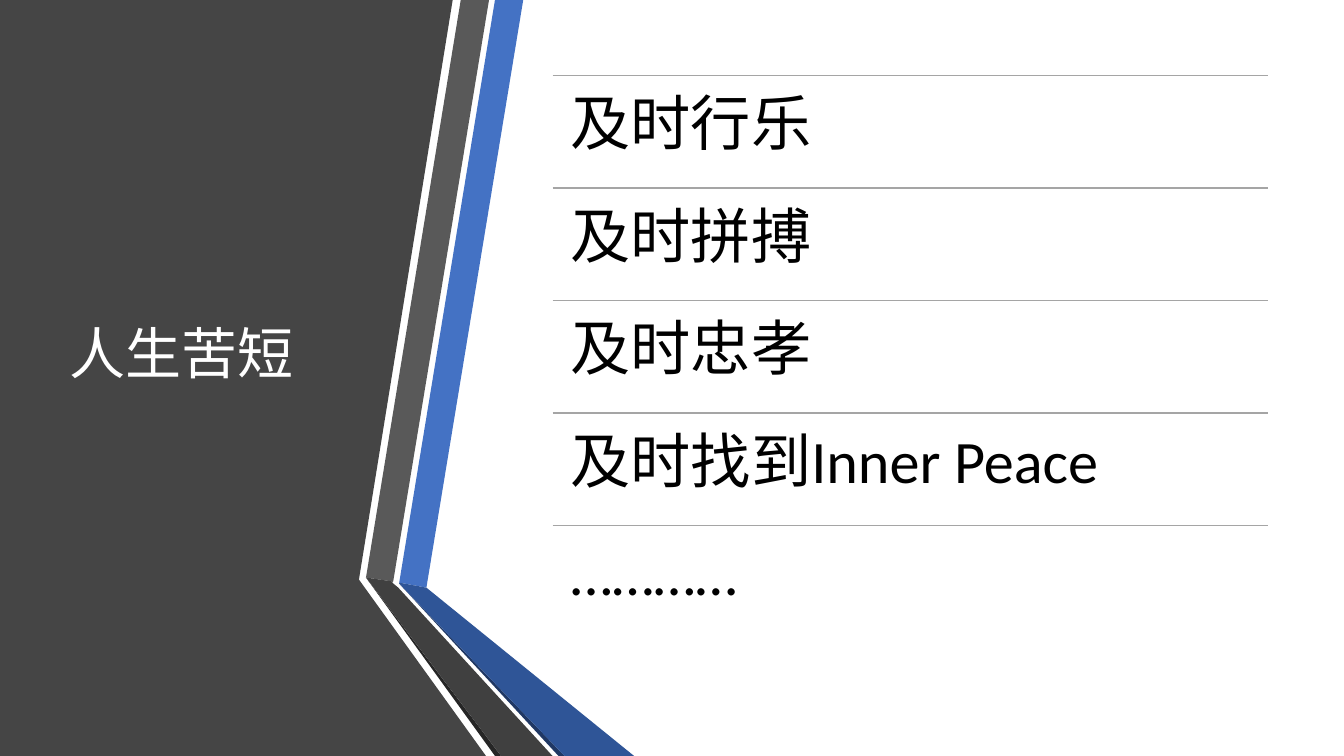
from lxml.etree import SubElement
from pptx import Presentation
from pptx.dml.color import RGBColor as RGB
from pptx.enum.shapes import MSO_CONNECTOR as LINK
from pptx.enum.text import MSO_ANCHOR as ANCHOR
from pptx.oxml.ns import qn
from pptx.util import Pt

PX = 9144  # 100 px to the inch
WIDE, HIGH = 1333, 750
FONT = "Calibri"

COLORS = {
    "panel": "454545", "blue": "4472C4", "gray": "595959",
    "black": "262626", "navy": "203864", "fold": "2F5597", "dark": "404040",
    "white": "FFFFFF", "text": "000000", "rule": "A5A5A5",
}

TITLE = "人生苦短"
ITEMS = ["及时行乐", "及时拼搏", "及时忠孝", "及时找到Inner Peace", "…………"]

# Color and corners of each piece, from back to front
BANDS = [
    ("panel", [(0, 0), (449, 0), (356, 575), (482, 750), (0, 750)]),
    ("blue", [(396, 578), (423, 583), (519, 0), (491, 0)]),
    ("gray", [(485, 0), (457, 0), (363, 573), (390, 577)]),
    ("black", [(363, 573), (491, 750), (497, 750)]),
    ("navy", [(396, 579), (554, 750), (560, 750)]),
    ("fold", [(396, 578), (396, 579), (560, 750), (629, 750), (423, 583)]),
    ("dark", [(548, 750), (395, 583), (389, 578), (390, 577),
              (363, 573), (497, 750)]),
]

TOP, TALL = 75, 558
TITLE_X, TITLE_W = 59, 304
LIST_X, LIST_W = 548, 710
TITLE_FMT = {"size": Pt(40), "name": FONT}
ITEM_FMT = {"size": Pt(43), "name": FONT}


def rgb(key):
    return RGB.from_string(COLORS[key])


def emu(*vals):
    return [round(v * PX) for v in vals]


def add_band(shapes, key, pts):
    form = shapes.build_freeform(*pts[0], scale=PX)
    form.add_line_segments(pts[1:], close=True)
    band = form.convert_to_shape()
    band.shadow.inherit = False
    band.fill.solid()
    band.fill.fore_color.rgb = rgb(key)
    band.line.fill.background()


def add_text(shapes, text, box, fmt, key, anchor, pad):
    """Add one line of text; pad is (sides, top and bottom) in px."""
    frame = shapes.add_textbox(*emu(*box)).text_frame
    side, edge = emu(*pad)
    for name, val in {
        "word_wrap": True, "vertical_anchor": anchor,
        "margin_left": side, "margin_right": side,
        "margin_top": edge, "margin_bottom": edge,
    }.items():
        setattr(frame, name, val)
    para = frame.paragraphs[0]
    para.line_spacing = 0.9
    run = para.add_run()
    run.text = text
    for name, val in fmt.items():
        setattr(run.font, name, val)
    run.font.color.rgb = rgb(key)


def add_rule(shapes, y):
    rule = shapes.add_connector(
        LINK.STRAIGHT, *emu(LIST_X, y, LIST_X + LIST_W, y))
    rule.line.color.rgb = rgb("rule")
    rule.line.width = Pt(1)
    SubElement(rule._element.spPr, qn("a:effectLst"))


def main():
    prs = Presentation()
    prs.slide_width, prs.slide_height = emu(WIDE, HIGH)
    shapes = prs.slides.add_slide(prs.slide_layouts[6]).shapes

    for key, pts in BANDS:
        add_band(shapes, key, pts)

    add_text(shapes, TITLE, (TITLE_X, TOP, TITLE_W, TALL),
             TITLE_FMT, "white", ANCHOR.MIDDLE, (10, 5))

    step = TALL / len(ITEMS)
    for i, item in enumerate(ITEMS):
        y = TOP + i * step
        add_rule(shapes, y)
        add_text(shapes, item, (LIST_X, y, LIST_W, step),
                 ITEM_FMT, "text", ANCHOR.TOP, (18, 18))

    prs.save("out.pptx")


if __name__ == "__main__":
    main()
